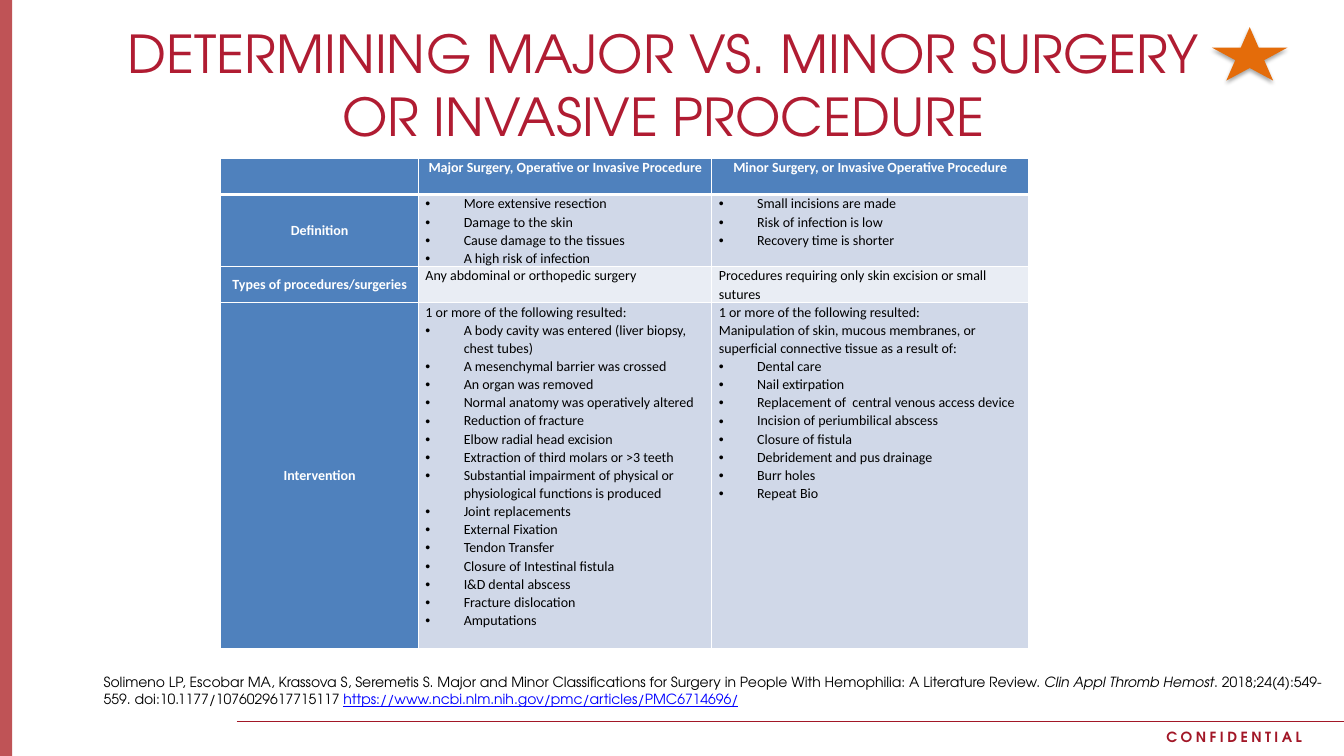
from dataclasses import dataclass
from lxml import etree
from pptx import Presentation
from pptx.dml.color import RGBColor
from pptx.enum import shapes, text
from pptx.oxml import ns
from pptx.util import Inches, Pt

TITLE = "DETERMINING MAJOR VS. MINOR SURGERY OR INVASIVE PROCEDURE"
FOOTER = "CONFIDENTIAL"
SOURCE = [
    ("Solimeno LP, Escobar MA, Krassova S, Seremetis S. Major and Minor Classifications "
     "for Surgery in People With Hemophilia: A Literature Review.\u00a0", "plain"),
    ("Clin Appl Thromb Hemost", "italic"),
    (". 2018;24(4):549-559. doi:10.1177/1076029617715117 ", "plain"),
    ("https://www.ncbi.nlm.nih.gov/pmc/articles/PMC6714696/", "link"),
]
HEADS = ["", "Major Surgery, Operative or Invasive Procedure",
         "Minor Surgery, or Invasive Operative Procedure"]
ROWS = [
    ("Definition",
     ([], ["More extensive resection", "Damage to the skin",
           "Cause damage to the tissues", "A high risk of infection"]),
     ([], ["Small incisions are made", "Risk of infection is low",
           "Recovery time is shorter"])),
    ("Types of procedures/surgeries",
     (["Any abdominal or orthopedic surgery"], []),
     (["Procedures requiring only skin excision or small sutures"], [])),
    ("Intervention",
     (["1 or more of the following resulted:"],
      ["A body cavity was entered (liver biopsy, chest tubes)",
       "A mesenchymal barrier was crossed", "An organ was removed",
       "Normal anatomy was operatively altered", "Reduction of fracture",
       "Elbow radial head excision", "Extraction of third molars or >3 teeth",
       "Substantial impairment of physical or physiological functions is produced",
       "Joint replacements", "External Fixation", "Tendon Transfer",
       "Closure of Intestinal fistula", "I&D dental abscess",
       "Fracture dislocation", "Amputations"]),
     (["1 or more of the following resulted:",
       "Manipulation of skin, mucous membranes, or superficial connective tissue "
       "as a result of:"],
      ["Dental care", "Nail extirpation",
       "Replacement of  central venous access device",
       "Incision of periumbilical abscess", "Closure of fistula",
       "Debridement and pus drainage", "Burr holes", "Repeat Bio"])),
]
WIDTHS = [1.96, 2.91, 3.14]
HEIGHTS = [0.36, 0.71, 0.36, 3.43]


@dataclass
class Theme:
    brand: str = "TeX Gyre Adventor"
    body: str = "Calibri"
    title: str = "B01C32"
    red: str = "A21727"
    bar: str = "AF282C"
    star: str = "E46C0A"
    link: str = "0000FF"
    black: str = "000000"
    white: str = "FFFFFF"
    head: str = "4F81BD"
    bands: tuple = ("D0D8E8", "E9EDF4")
    large: float = 37.3
    small: float = 10


look = Theme()


def add_node(parent, tag, **attrs):
    return etree.SubElement(parent, ns.qn(tag), **attrs)


def paint(fill, color):
    fill.solid()
    fill.fore_color.rgb = RGBColor.from_string(color)


def add_run(para, words, face, size, color, bold=False):
    run = para.add_run()
    run.text = words
    font = run.font
    font.name, font.size, font.bold = face, Pt(size), bold
    font.color.rgb = RGBColor.from_string(color)
    return run


def add_box(slide, *place):
    frame = slide.shapes.add_textbox(*map(Inches, place)).text_frame
    frame.word_wrap = True
    return frame.paragraphs[0]


def add_solid(slide, kind, color, *place):
    shape = slide.shapes.add_shape(kind, *map(Inches, place))
    shape.shadow.inherit = False
    paint(shape.fill, color)
    shape.line.fill.background()
    return shape


def add_edges(cell, row):
    props = cell._tc.get_or_add_tcPr()
    for spot, side in enumerate("LRTB"):
        thick = (row, side) in ((0, "B"), (1, "T"))
        edge = etree.Element(ns.qn(f"a:ln{side}"), w=str(Pt(3 if thick else 1)))
        add_node(add_node(edge, "a:solidFill"), "a:srgbClr", val=look.white)
        props.insert(spot, edge)


def fill_cell(cell, row, color, lines, dots=(), head=False):
    cell.margin_left = cell.margin_right = Inches(0.07)
    cell.margin_top = cell.margin_bottom = 0
    paint(cell.fill, color)
    add_edges(cell, row)
    if head and row:
        cell.vertical_anchor = text.MSO_ANCHOR.MIDDLE
    frame = cell.text_frame
    items = [(line, False) for line in lines] + [(dot, True) for dot in dots]
    for spot, (words, dotted) in enumerate(items):
        para = frame.add_paragraph() if spot else frame.paragraphs[0]
        para.line_spacing = 1.07
        if head:
            para.alignment = text.PP_ALIGN.CENTER
        if dotted:
            props = para._p.get_or_add_pPr()
            props.set("marL", str(Inches(0.38)))
            props.set("indent", str(-Inches(0.38)))
            add_node(props, "a:buFont", typeface="Arial")
            add_node(props, "a:buChar", char="•")
        if words:
            ink = look.white if head else look.black
            add_run(para, words, look.body, look.small, ink, head)


def add_grid(slide):
    size = len(HEIGHTS), len(WIDTHS)
    place = 2.19, 1.57, sum(WIDTHS), sum(HEIGHTS)
    table = slide.shapes.add_table(*size, *map(Inches, place)).table
    for col, width in zip(table.columns, WIDTHS):
        col.width = Inches(width)
    for line, height in zip(table.rows, HEIGHTS):
        line.height = Inches(height)
    for col, words in enumerate(HEADS):
        fill_cell(table.cell(0, col), 0, look.head, [words], head=True)
    for row, (label, *sides) in enumerate(ROWS, 1):
        fill_cell(table.cell(row, 0), row, look.head, [label], head=True)
        for col, (lines, dots) in enumerate(sides, 1):
            fill_cell(table.cell(row, col), row, look.bands[(row - 1) % 2], lines, dots)


def add_frame(slide):
    bar = add_solid(slide, shapes.MSO_SHAPE.RECTANGLE, look.bar, 0, 0, 0.12, 7.5)
    tint = bar._element.spPr.find(".//" + ns.qn("a:srgbClr"))
    add_node(tint, "a:alpha", val="80000")
    para = add_box(slide, 11.47, 7.18, 1.86, 0.27)
    run = add_run(para, FOOTER, look.brand, look.small, look.red, True)
    run._r.get_or_add_rPr().set("spc", "250")
    ends = map(Inches, (2.35, 7.16, 13.33, 7.16))
    rule = slide.shapes.add_connector(shapes.MSO_CONNECTOR.STRAIGHT, *ends)
    rule.line.width = Pt(1)
    paint(rule.line.fill, look.red)
    add_node(rule._element.spPr, "a:effectLst")


def add_title(slide):
    title = slide.shapes.title
    title.left, title.top, title.width, title.height = map(Inches, (0.75, 0.16, 11.66, 0.6))
    frame = title.text_frame
    frame.word_wrap = True
    frame.auto_size = text.MSO_AUTO_SIZE.NONE
    frame.vertical_anchor = text.MSO_ANCHOR.TOP
    para = frame.paragraphs[0]
    para.alignment = text.PP_ALIGN.CENTER
    add_run(para, TITLE, look.brand, look.large, look.title)


def add_source(slide):
    para = add_box(slide, 0.93, 6.63, 12.4, 0.34)
    for words, style in SOURCE:
        ink = look.link if style == "link" else look.black
        run = add_run(para, words, look.brand, look.small, ink)
        run.font.italic = style == "italic"
        run.font.underline = style == "link"


def add_star(slide):
    star = add_solid(slide, shapes.MSO_SHAPE.STAR_5_POINT, look.star, 12.02, 0.27, 0.75, 0.53)
    glow = star._element.spPr.find(ns.qn("a:effectLst"))
    shade = add_node(glow, "a:outerShdw", blurRad=str(Pt(3.1)), dist=str(Pt(1.8)),
                     dir="5400000", rotWithShape="0")
    tint = add_node(shade, "a:srgbClr", val=look.black)
    add_node(tint, "a:alpha", val="35000")


def main():
    deck = Presentation()
    deck.slide_width, deck.slide_height = Inches(13.33), Inches(7.5)
    slide = deck.slides.add_slide(deck.slide_layouts[5])
    for part in (add_frame, add_title, add_source, add_grid, add_star):
        part(slide)
    deck.save("out.pptx")


if __name__ == "__main__":
    main()
